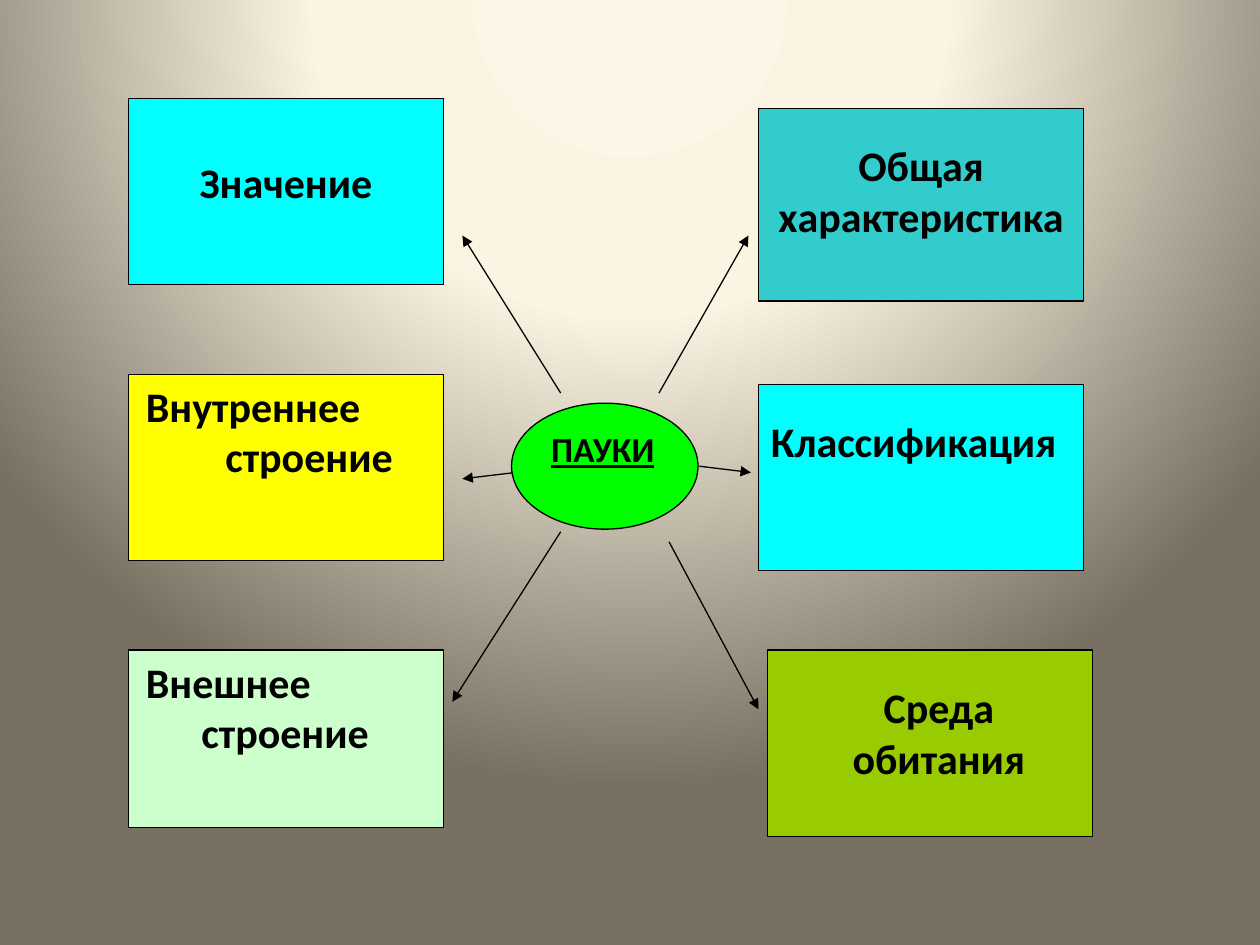
import pptx
import pptx.dml.color
import pptx.enum.shapes
import pptx.enum.text
import pptx.oxml
import pptx.oxml.ns
import pptx.util

Inches, Pt = pptx.util.Inches, pptx.util.Pt
SHAPE = pptx.enum.shapes.MSO_SHAPE
ALIGN = pptx.enum.text.PP_ALIGN

COLORS = {
    "black": "000000", "cyan": "00FFFF", "teal": "33CCCC", "yellow": "FFFF00",
    "mint": "CCFFCC", "olive": "99CC00", "green": "00FF00",
    "glow": "FCF6E6", "cream": "FBF4E2", "taupe": "787161",
}
LEFT, RIGHT = 1.02, 6.02
LEFT_W, RIGHT_W = 2.5, 2.58

# box in inches, fill, paragraphs, text format
TOPICS = [
    ((LEFT, 0.78, LEFT_W, 1.48), "cyan", ["Значение"], {"top": 0.46}),
    ((LEFT, 2.97, LEFT_W, 1.48), "yellow", ["Внутреннее строение"],
     {"align": ALIGN.LEFT, "first": 0.04, "hang": 0.67}),
    ((LEFT, 5.16, LEFT_W, 1.41), "mint", ["Внешнее строение"],
     {"align": ALIGN.LEFT, "first": 0.04, "hang": 0.48}),
    ((RIGHT, 0.86, RIGHT_W, 1.53), "teal", ["Общая характеристика"], {"top": 0.25}),
    ((RIGHT, 3.05, RIGHT_W, 1.48), "cyan", ["Классификация"],
     {"align": ALIGN.LEFT, "top": 0.25}),
    ((6.09, 5.16, RIGHT_W, 1.48), "olive", ["Среда", "обитания"],
     {"top": 0.25, "left": 0.24}),
]
ARROWS = [
    ((4.45, 3.12), (3.67, 1.87)), ((4.09, 3.75), (3.67, 3.8)),
    ((4.45, 4.22), (3.59, 5.57)), ((5.23, 3.12), (5.94, 1.87)),
    ((5.55, 3.7), (5.96, 3.75)), ((5.31, 4.3), (6.02, 5.63)),
]


def rgb(name):
    return pptx.dml.color.RGBColor.from_string(COLORS[name])


def outline(sp):
    sp.line.color.rgb = rgb("black")
    sp.line.width = Pt(0.75)


def set_background(s):
    """Fill the slide with a radial gradient centred above its top edge."""
    stops = "".join(
        f'<a:gs pos="{pos * 1000}"><a:srgbClr val="{COLORS[name]}"/></a:gs>'
        for pos, name in [(0, "glow"), (40, "cream"), (100, "taupe")])
    bg = pptx.oxml.parse_xml(
        f'<p:bg {pptx.oxml.ns.nsdecls("p", "a")}><p:bgPr>'
        f'<a:gradFill rotWithShape="1"><a:gsLst>{stops}</a:gsLst>'
        '<a:path path="circle">'
        '<a:fillToRect l="50000" t="-80000" r="50000" b="180000"/>'
        '</a:path></a:gradFill><a:effectLst/></p:bgPr></p:bg>')
    s.element.cSld.insert(0, bg)


def write(sp, lines, size=24, align=ALIGN.CENTER, underline=None,
          top=0.05, left=0.1, first=0, hang=0):
    """Write paragraphs from the top; first and hang indent their lines."""
    tf = sp.text_frame
    tf.word_wrap = True
    tf.vertical_anchor = pptx.enum.text.MSO_ANCHOR.TOP
    tf.margin_top, tf.margin_left = Inches(top), Inches(left)
    for i, text in enumerate(lines):
        p = tf.paragraphs[0] if i == 0 else tf.add_paragraph()
        p.alignment = align
        if hang:
            pPr = p._p.get_or_add_pPr()
            pPr.set("marL", str(Inches(hang)))
            pPr.set("indent", str(Inches(first) - Inches(hang)))
        r = p.add_run()
        r.text = text
        r.font.name, r.font.size = "Calibri", Pt(size)
        r.font.bold, r.font.underline = True, underline
        r.font.color.rgb = rgb("black")


def add_node(s, box, fill, lines, kind=SHAPE.RECTANGLE, **text_format):
    sp = s.shapes.add_shape(kind, *map(Inches, box))
    sp.shadow.inherit = False
    sp.fill.solid()
    sp.fill.fore_color.rgb = rgb(fill)
    outline(sp)
    write(sp, lines, **text_format)


def add_arrow(s, start, end):
    line = s.shapes.add_connector(
        pptx.enum.shapes.MSO_CONNECTOR.STRAIGHT, *map(Inches, start + end))
    outline(line)
    ns = pptx.oxml.ns.nsdecls("a")
    line.line._get_or_add_ln().append(
        pptx.oxml.parse_xml(f'<a:tailEnd {ns} type="triangle"/>'))
    line._element.spPr.append(pptx.oxml.parse_xml(f"<a:effectLst {ns}/>"))


def main():
    prs = pptx.Presentation()
    prs.slide_width, prs.slide_height = Inches(10), Inches(7.5)
    s = prs.slides.add_slide(prs.slide_layouts[6])
    set_background(s)
    for box, fill, lines, text_format in TOPICS:
        add_node(s, box, fill, lines, **text_format)
    for start, end in ARROWS:
        add_arrow(s, start, end)
    add_node(s, (4.06, 3.2, 1.48, 1), "green", ["ПАУКИ"], kind=SHAPE.OVAL,
             size=20, align=ALIGN.LEFT, underline=True)
    prs.save("out.pptx")


if __name__ == "__main__":
    main()
